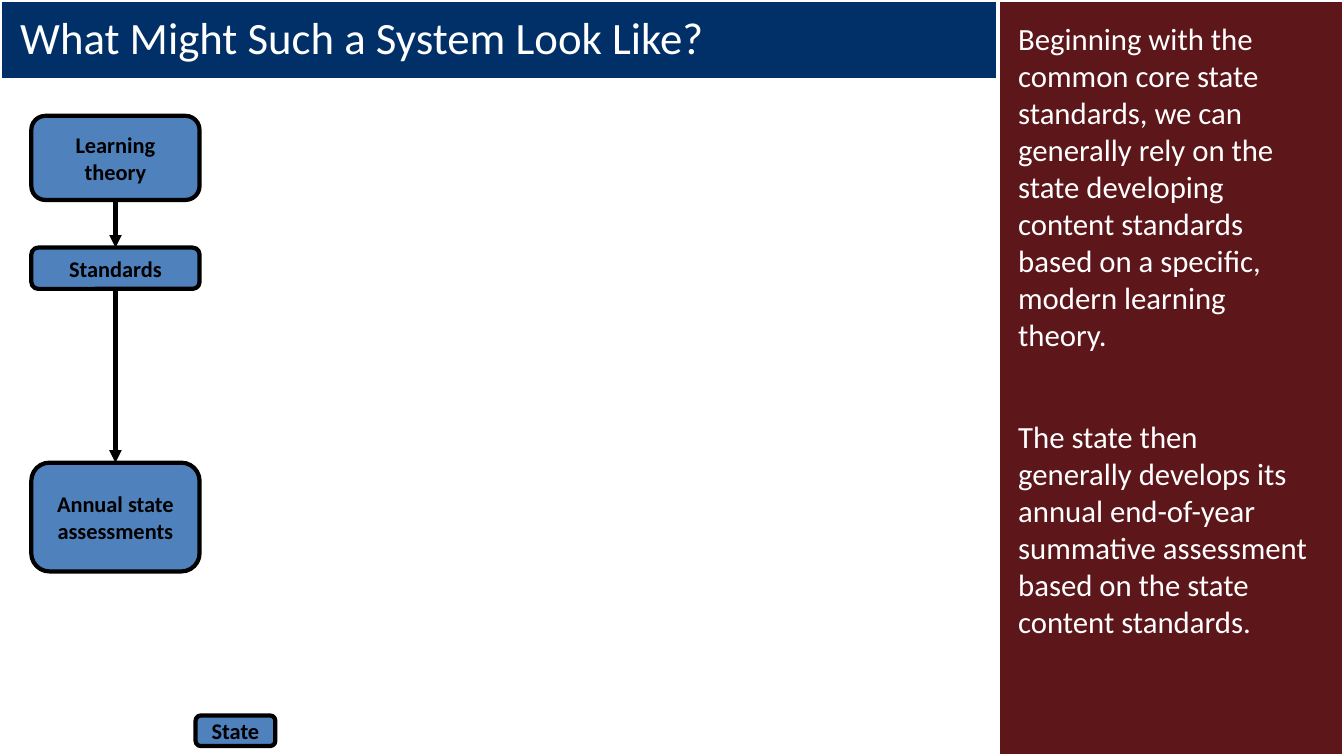
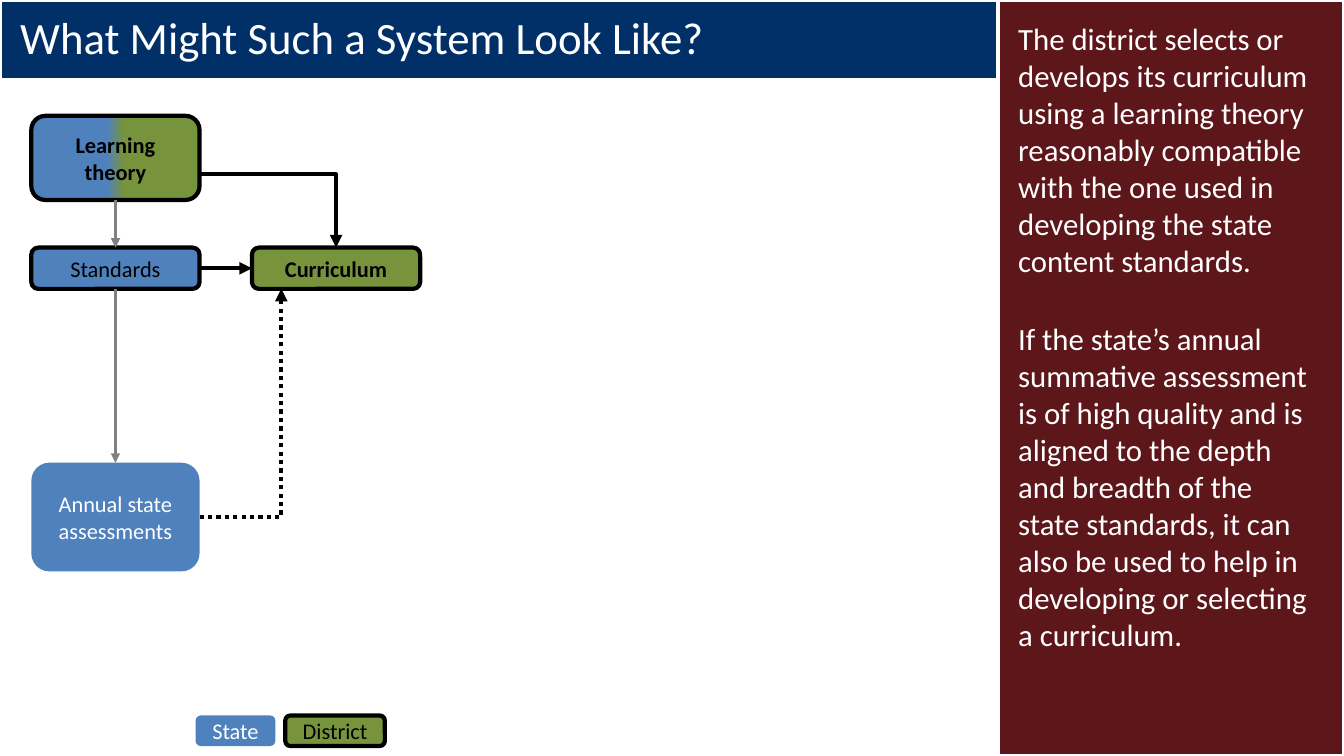
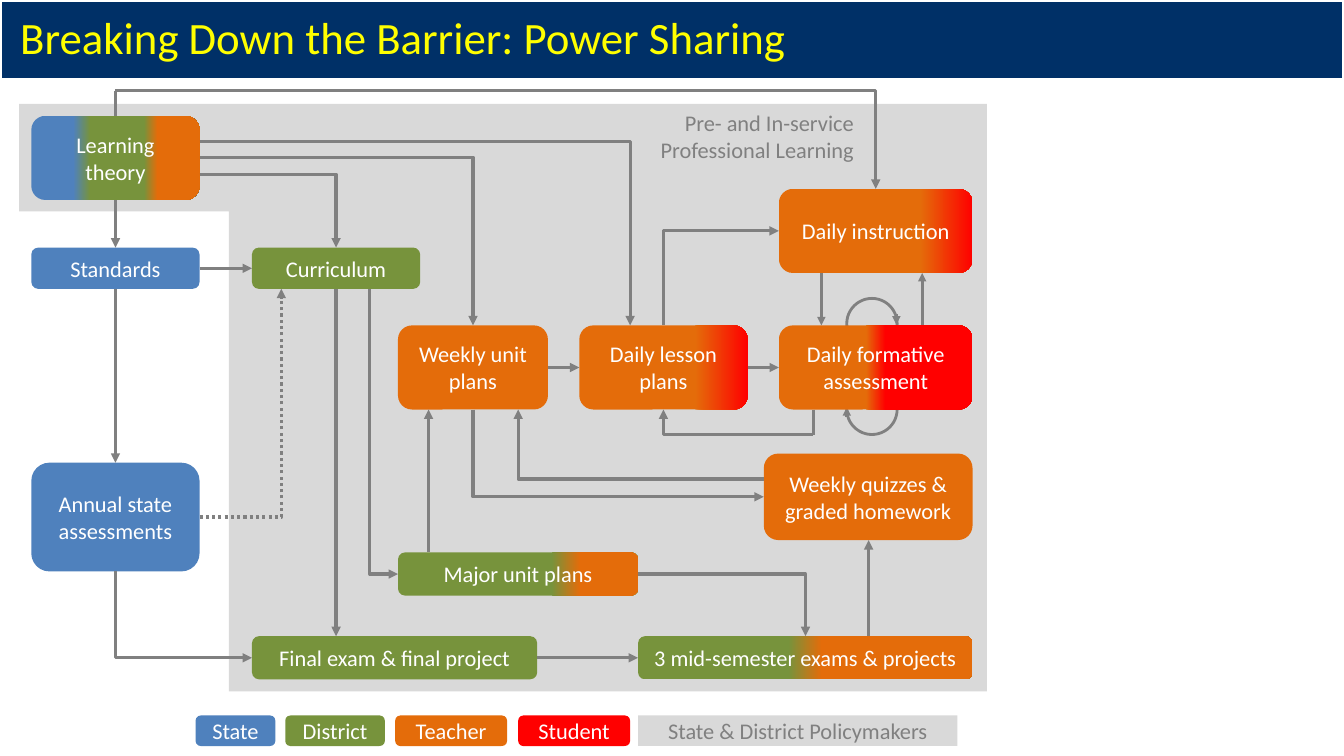
from dataclasses import dataclass

from lxml import etree
from pptx import Presentation
from pptx.dml.color import RGBColor
from pptx.enum.dml import MSO_LINE
from pptx.enum.shapes import MSO_CONNECTOR, MSO_SHAPE
from pptx.enum.text import MSO_ANCHOR, MSO_AUTO_SIZE, PP_ALIGN
from pptx.oxml.ns import qn
from pptx.util import Cm, Pt

STRAIGHT, ELBOW = MSO_CONNECTOR.STRAIGHT, MSO_CONNECTOR.ELBOW
RECTANGLE, ROUNDED = MSO_SHAPE.RECTANGLE, MSO_SHAPE.ROUNDED_RECTANGLE
OVAL = MSO_SHAPE.OVAL
LEFT, CENTER, RIGHT = PP_ALIGN.LEFT, PP_ALIGN.CENTER, PP_ALIGN.RIGHT
TOP, MIDDLE = MSO_ANCHOR.TOP, MSO_ANCHOR.MIDDLE
DOTTED = MSO_LINE.ROUND_DOT
VERTICAL_FIRST, HORIZONTAL_FIRST = 0, 100000

FONT = "Calibri"
SLIDE_WIDTH, SLIDE_HEIGHT = 33.87, 19.05
PANEL_LEFT = 25.15
COLORS = {
    "navy": "003067",
    "maroon": "5D161A",
    "white": "FFFFFF",
    "black": "000000",
    "yellow": "FFFF00",
    "gray": "808080",
    "policy": "D9D9D9",
    "state": "4F81BD",
    "district": "77933C",
    "teacher": "E46C0A",
    "student": "FF0000",
}


@dataclass(frozen=True)
class Box:
    text: str
    left: float
    top: float
    width: float
    height: float

    @property
    def right(self):
        return self.left + self.width

    @property
    def bottom(self):
        return self.top + self.height

    @property
    def center(self):
        return self.left + self.width / 2

    @property
    def middle(self):
        return self.top + self.height / 2


THEORY = Box("Learning theory", 0.79, 2.92, 4.24, 2.12)
STANDARDS = Box("Standards", 0.79, 6.24, 4.24, 1.04)
ANNUAL = Box("Annual state assessments", 0.79, 11.66, 4.24, 2.74)
CURRICULUM = Box("Curriculum", 6.35, 6.24, 4.24, 1.04)
UNIT_PLANS = Box("Weekly unit plans", 10.03, 8.2, 3.78, 2.12)
LESSON_PLANS = Box("Daily lesson plans", 14.6, 8.2, 4.24, 2.12)
INSTRUCTION = Box("Daily instruction", 19.63, 4.76, 4.88, 2.12)
FORMATIVE = Box("Daily formative assessment", 19.63, 8.2, 4.88, 2.12)
QUIZZES = Box("Weekly quizzes & graded homework", 19.25, 11.43, 5.26, 2.18)
MAJOR_PLANS = Box("Major unit plans", 10.03, 13.92, 6.05, 1.09)
FINAL_EXAM = Box("Final exam & final project", 6.35, 16.03, 7.19, 1.09)
MID_EXAMS = Box("3 mid-semester exams & projects", 16.08, 16.03, 8.43, 1.09)
LEGEND = {
    "state": Box("State", 4.93, 18.03, 2.01, 0.77),
    "district": Box("District", 7.19, 18.03, 2.51, 0.77),
    "teacher": Box("Teacher", 9.96, 18.03, 2.82, 0.77),
    "student": Box("Student", 13.06, 18.03, 2.82, 0.77),
    "policy": Box("State & District Policymakers", 16.08, 18.03, 8.05, 0.77),
}


def color(name):
    return RGBColor.from_string(COLORS[name])


class Deck:
    def __init__(self):
        self.presentation = Presentation()
        self.presentation.slide_width = Cm(SLIDE_WIDTH)
        self.presentation.slide_height = Cm(SLIDE_HEIGHT)
        self.slide = None

    def paint(self, shape, fill, line=None, weight=3):
        if fill is None:
            shape.fill.background()
        elif isinstance(fill, str):
            shape.fill.solid()
            shape.fill.fore_color.rgb = color(fill)
        else:
            shape.fill.gradient()
            shape.fill.gradient_angle = 0
            stops = shape._element.spPr.find(".//" + qn("a:gsLst"))
            for stop in list(stops):
                stops.remove(stop)
            for percent, name in fill:
                stop = etree.SubElement(stops, qn("a:gs"), pos=str(percent * 1000))
                etree.SubElement(stop, qn("a:srgbClr"), val=COLORS[name])
        if line:
            shape.line.color.rgb = color(line)
            shape.line.width = Pt(weight)
        else:
            shape.line.fill.background()

    def set_text(self, shape, texts, size, text_color, align, anchor=MIDDLE,
                 bold=False, gap=0, insets=(0.25, 0.13, 0.25, 0.13)):
        frame = shape.text_frame
        frame.word_wrap = True
        frame.auto_size = MSO_AUTO_SIZE.NONE
        frame.vertical_anchor = anchor
        (frame.margin_left, frame.margin_top,
         frame.margin_right, frame.margin_bottom) = map(Cm, insets)
        for index, text in enumerate(texts):
            paragraph = frame.add_paragraph() if index else frame.paragraphs[0]
            paragraph.text = text
            paragraph.alignment = align
            if index and gap:
                paragraph.space_before = Pt(gap)
            font = paragraph.font
            font.name, font.size, font.bold = FONT, Pt(size), bold
            font.color.rgb = color(text_color)
        return frame

    def shape(self, kind, left, top, width, height, fill, line=None, weight=3):
        shape = self.slide.shapes.add_shape(
            kind, Cm(left), Cm(top), Cm(width), Cm(height))
        shape.shadow.inherit = False
        self.paint(shape, fill, line, weight)
        return shape

    def start(self, title, text_color="white", width=SLIDE_WIDTH):
        layout = self.presentation.slide_layouts[5]
        self.slide = self.presentation.slides.add_slide(layout)
        shape = self.slide.shapes.title
        shape.left, shape.top = Cm(0), Cm(0)
        shape.width, shape.height = Cm(width), Cm(2.03)
        self.paint(shape, "navy", "white")
        frame = self.set_text(shape, [title], 32, text_color, LEFT,
                              insets=(0.51, 0.13, 0.51, 0.13))
        frame.paragraphs[0].line_spacing = 0.9

    def side_panel(self, texts, gap):
        shape = self.shape(RECTANGLE, PANEL_LEFT, 0, SLIDE_WIDTH - PANEL_LEFT,
                           SLIDE_HEIGHT, "maroon", "white")
        self.set_text(shape, texts, 22, "white", LEFT, TOP, gap=gap,
                      insets=(0.51, 0.51, 0.76, 0.13))

    def box(self, box, fill, outlined=False, bold=False, text_color="white",
            kind=ROUNDED):
        shape = self.shape(kind, box.left, box.top, box.width, box.height,
                           fill, "black" if outlined else None)
        self.set_text(shape, [box.text], 16,
                      "black" if outlined else text_color, CENTER, bold=bold)

    def legend(self, *names):
        for name in names:
            self.box(LEGEND[name], name)

    def policy_area(self, points, texts):
        corners = [(Cm(x), Cm(y)) for x, y in points]
        builder = self.slide.shapes.build_freeform(*corners[0])
        builder.add_line_segments(corners[1:], close=True)
        shape = builder.convert_to_shape()
        shape.shadow.inherit = False
        self.paint(shape, "policy")
        self.set_text(shape, texts, 16, "gray", RIGHT, TOP,
                      insets=(0.25, 0.13, 3.35, 0.13))

    def arrow(self, start, end, bend=None, line="gray", weight=2.25,
              dash=None, tip="tailEnd"):
        connector = self.slide.shapes.add_connector(
            STRAIGHT if bend is None else ELBOW, *map(Cm, start + end))
        connector.line.color.rgb = color(line)
        connector.line.width = Pt(weight)
        if dash:
            connector.line.dash_style = dash
        properties = connector._element.spPr
        if bend is not None:
            guides = properties.find(".//" + qn("a:avLst"))
            etree.SubElement(guides, qn("a:gd"), name="adj1", fmla=f"val {bend}")
        if tip:
            etree.SubElement(properties.find(qn("a:ln")), qn(f"a:{tip}"),
                             type="triangle")
        etree.SubElement(properties, qn("a:effectLst"))

    def state_arrows(self, **style):
        for upper, lower in ((THEORY, STANDARDS), (STANDARDS, ANNUAL)):
            self.arrow((upper.center, upper.bottom), (lower.center, lower.top),
                       **style)

    def curriculum_arrows(self, **style):
        self.arrow((ANNUAL.right, ANNUAL.middle), (7.09, CURRICULUM.bottom),
                   HORIZONTAL_FIRST, dash=DOTTED, **style)
        self.arrow((STANDARDS.right, STANDARDS.middle),
                   (CURRICULUM.left, CURRICULUM.middle), **style)
        self.arrow((THEORY.right, 4.39), (CURRICULUM.center, CURRICULUM.top),
                   HORIZONTAL_FIRST, **style)


def state_slide(deck):
    deck.start("What Might Such a System Look Like?", width=25.17)
    for box in (LEGEND["state"], STANDARDS, ANNUAL, THEORY):
        deck.box(box, "state", outlined=True, bold=True)
    deck.state_arrows(line="black", weight=3)
    deck.side_panel([
        "Beginning with the common core state standards, we can generally rely "
        "on the state developing content standards based on a specific, modern "
        "learning theory.",
        "The state then generally develops its annual end-of-year summative "
        "assessment based on the state content standards.",
    ], gap=46.5)


def district_slide(deck):
    deck.start("What Might Such a System Look Like?")
    deck.legend("state")
    deck.box(LEGEND["district"], "district", outlined=True)
    deck.box(CURRICULUM, "district", outlined=True, bold=True)
    deck.box(STANDARDS, "state", outlined=True)
    deck.box(ANNUAL, "state")
    deck.box(THEORY, [(0, "state"), (45, "state"), (55, "district"),
                      (100, "district")], outlined=True, bold=True)
    deck.state_arrows()
    deck.curriculum_arrows(line="black", weight=3)
    deck.side_panel([
        "The district selects or develops its curriculum using a learning "
        "theory reasonably compatible with the one used in developing the "
        "state content standards.",
        "If the state’s annual summative assessment is of high quality and is "
        "aligned to the depth and breadth of the state standards, it can also "
        "be used to help in developing or selecting a curriculum.",
    ], gap=29.5)


def power_sharing_slide(deck):
    deck.start("Breaking Down the Barrier: Power Sharing", "yellow")
    deck.policy_area(
        [(0.48, 2.62), (24.87, 2.62), (24.87, 17.42), (5.77, 17.42),
         (5.77, 5.33), (0.48, 5.33)],
        ["Pre- and In-service", "Professional Learning"])
    deck.legend("state", "district", "teacher", "student")
    deck.box(LEGEND["policy"], "policy", text_color="gray", kind=RECTANGLE)

    for top in (7.52, 9.68):
        deck.shape(OVAL, 21.34, top, 1.27, 1.27, None, "gray", 2)
    deck.arrow((21.34, 10.52), (21.34, 10.26), weight=2)
    deck.arrow((22.59, 7.92), (22.59, 8.18), weight=2)

    for box, fill in (
        (STANDARDS, "state"),
        (ANNUAL, "state"),
        (CURRICULUM, "district"),
        (FINAL_EXAM, "district"),
        (UNIT_PLANS, "teacher"),
        (QUIZZES, "teacher"),
        (LESSON_PLANS, [(0, "teacher"), (69, "teacher"), (100, "student")]),
        (INSTRUCTION, [(0, "teacher"), (73, "teacher"), (100, "student")]),
        (FORMATIVE, [(0, "teacher"), (45, "teacher"), (55, "student"),
                     (100, "student")]),
        (MAJOR_PLANS, [(0, "district"), (64, "district"), (76, "teacher"),
                       (100, "teacher")]),
        (MID_EXAMS, [(0, "district"), (45, "district"), (55, "teacher"),
                     (100, "teacher")]),
        (THEORY, [(0, "state"), (25, "state"), (35, "district"),
                  (67, "district"), (75, "teacher"), (100, "teacher")]),
    ):
        deck.box(box, fill)

    deck.state_arrows()
    deck.curriculum_arrows()
    for left, right in ((UNIT_PLANS, LESSON_PLANS), (LESSON_PLANS, FORMATIVE),
                        (FINAL_EXAM, MID_EXAMS)):
        deck.arrow((left.right, left.middle), (right.left, right.middle))
    for start, end in (
        ((20.7, INSTRUCTION.bottom), (20.7, FORMATIVE.top)),
        ((23.24, FORMATIVE.top), (23.24, INSTRUCTION.bottom)),
    ):
        deck.arrow(start, end, weight=2)
    for start, end in (
        ((21.89, MID_EXAMS.top), (21.89, QUIZZES.bottom)),
        ((CURRICULUM.center, CURRICULUM.bottom),
         (CURRICULUM.center, FINAL_EXAM.top)),
        ((10.8, MAJOR_PLANS.top), (10.8, UNIT_PLANS.bottom)),
    ):
        deck.arrow(start, end)

    for start, end in (
        ((9.32, CURRICULUM.bottom), (MAJOR_PLANS.left, MAJOR_PLANS.middle)),
        ((ANNUAL.center, ANNUAL.bottom), (FINAL_EXAM.left, FINAL_EXAM.middle)),
        ((UNIT_PLANS.center, UNIT_PLANS.bottom), (QUIZZES.left, QUIZZES.middle)),
        ((LESSON_PLANS.center, LESSON_PLANS.top),
         (INSTRUCTION.left, INSTRUCTION.middle)),
    ):
        deck.arrow(start, end, VERTICAL_FIRST)
    for start, end in (
        ((THEORY.right, 3.56), (15.88, LESSON_PLANS.top)),
        ((THEORY.right, 3.96), (UNIT_PLANS.center, UNIT_PLANS.top)),
        ((MAJOR_PLANS.right, MAJOR_PLANS.middle), (20.3, MID_EXAMS.top)),
        ((THEORY.center, 2.29), (INSTRUCTION.center, INSTRUCTION.top)),
    ):
        deck.arrow(start, end, HORIZONTAL_FIRST)
    for start, end in (
        ((13.06, UNIT_PLANS.bottom), (QUIZZES.left, 12.07)),
        ((LESSON_PLANS.center, LESSON_PLANS.bottom), (20.5, 10.95)),
    ):
        deck.arrow(start, end, VERTICAL_FIRST, tip="headEnd")
    deck.arrow((THEORY.center, THEORY.top), (THEORY.center, 2.29), tip=None)
    deck.arrow((20.5, FORMATIVE.bottom), (20.5, 10.95), tip=None)


def main():
    deck = Deck()
    state_slide(deck)
    district_slide(deck)
    power_sharing_slide(deck)
    deck.presentation.save("out.pptx")


if __name__ == "__main__":
    main()
